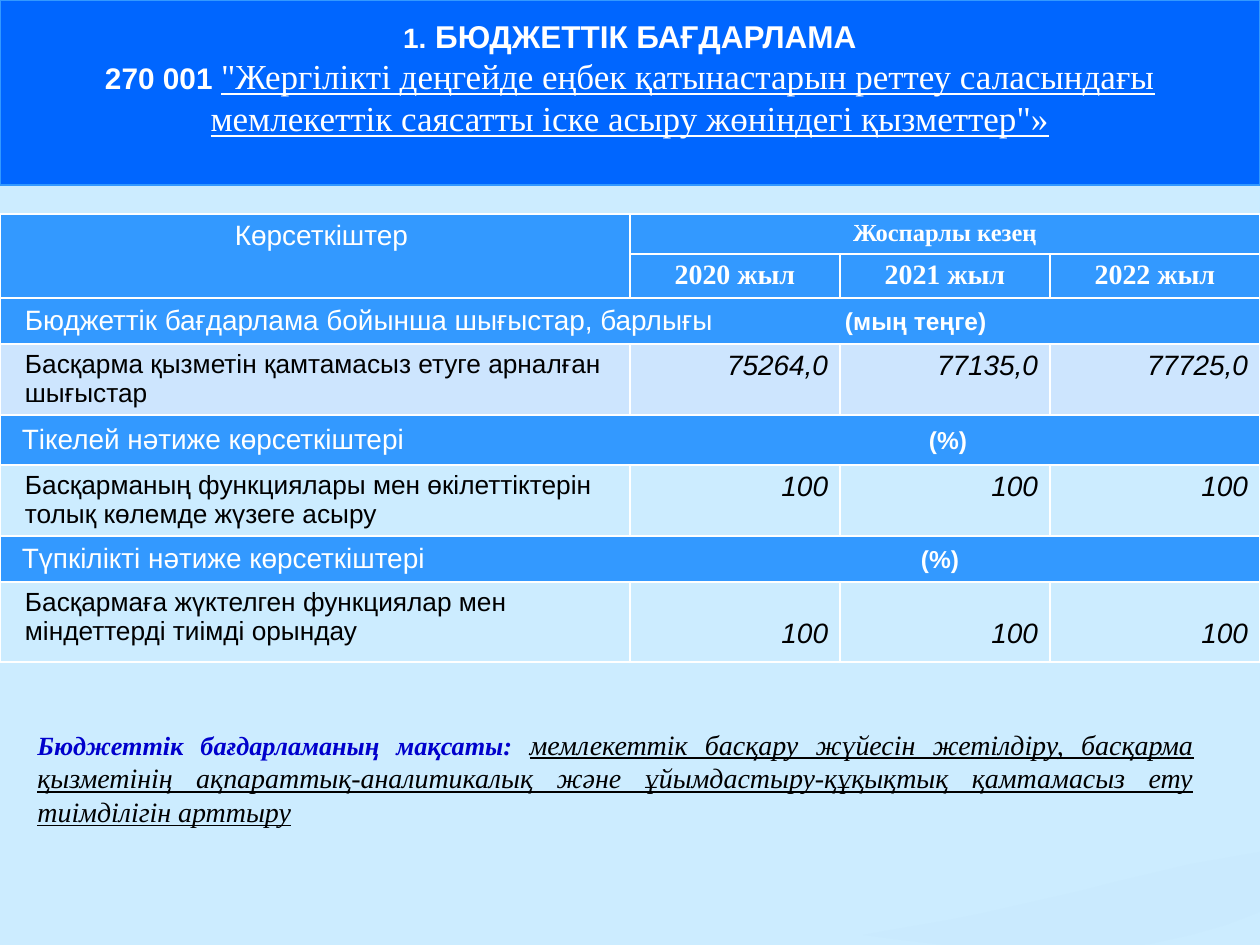
from lxml import etree
from pptx import Presentation
from pptx.dml.color import RGBColor
from pptx.enum.shapes import MSO_SHAPE
from pptx.enum.text import MSO_ANCHOR, PP_ALIGN
from pptx.oxml import parse_xml
from pptx.oxml.ns import nsdecls, qn
from pptx.util import Emu, Pt

RECTANGLE = MSO_SHAPE.RECTANGLE
TOP, MIDDLE, BOTTOM = MSO_ANCHOR.TOP, MSO_ANCHOR.MIDDLE, MSO_ANCHOR.BOTTOM
LEFT, CENTER, RIGHT, JUSTIFY = PP_ALIGN.LEFT, PP_ALIGN.CENTER, PP_ALIGN.RIGHT, PP_ALIGN.JUSTIFY
SERIF = "Times New Roman"
WHITE, BLACK, BLUE, PALE = "FFFFFF", "000000", "3399FF", "CDE5FE"
EMU_PER_PX = 914400 // 126

COLUMN_WIDTHS = [630, 210, 210, 210]
ROW_HEIGHTS = [40, 44, 46, 71, 50, 71, 46, 80]
YEARS = ["2020 жыл", "2021 жыл", "2022 жыл"]
SECTIONS = [
    (2, "Бюджеттік бағдарлама бойынша шығыстар, барлығы", "(мың теңге)", 25, 845),
    (4, "Тікелей нәтиже көрсеткіштері", "(%)", 22, 929),
    (6, "Түпкілікті нәтиже көрсеткіштері", "(%)", 22, 921),
]
INDICATORS = [
    (3, "Басқарма қызметін қамтамасыз етуге арналған шығыстар",
     ["75264,0", "77135,0", "77725,0"], PALE, TOP),
    (5, "Басқарманың функциялары мен өкілеттіктерін толық көлемде жүзеге асыру",
     ["100"] * 3, None, TOP),
    (7, "Басқармаға жүктелген функциялар мен міндеттерді тиімді орындау",
     ["100"] * 3, None, BOTTOM),
]
WAVE = [
    (1260, 852), (1242, 855), (1226, 858), (1191, 864), (1153, 873), (1115, 882),
    (1080, 891), (979, 914), (949, 920), (891, 930), (863, 935), (901, 940),
    (953, 946), (999, 950), (1042, 951), (1082, 950), (1118, 948), (1150, 944),
    (1191, 935), (1226, 925), (1260, 912),
]


def px(value):
    return Emu(value * EMU_PER_PX)


def color(value):
    return RGBColor.from_string(value)


def add_text(para, text, size=16, font="Arial", fill=WHITE, bold=False, italic=False,
             underline=False, align=None):
    if align is not None:
        para.alignment = align
    span = para.add_run()
    span.text = text
    span.font.size = Pt(size)
    span.font.name = font
    span.font.color.rgb = color(fill)
    span.font.bold = bold
    span.font.italic = italic
    span.font.underline = underline


def add_tab_stop(para, position):
    properties = para._p.get_or_add_pPr()
    stops = etree.SubElement(properties, qn("a:tabLst"))
    etree.SubElement(stops, qn("a:tab"), pos=str(px(position)), algn="l")


def format_cell(cell, fill):
    properties = cell._tc.get_or_add_tcPr()
    for side in ("lnL", "lnR", "lnT", "lnB"):
        properties.append(parse_xml(
            f'<a:{side} {nsdecls("a")} w="12700"><a:solidFill>'
            f'<a:srgbClr val="{WHITE}"/></a:solidFill></a:{side}>'))
    if fill:
        cell.fill.solid()
        cell.fill.fore_color.rgb = color(fill)
    else:
        cell.fill.background()


def place_in_cell(cell, left=12, right=12, bottom=6, anchor=TOP):
    cell.margin_left, cell.margin_right = px(left), px(right)
    cell.margin_top, cell.margin_bottom = px(6), px(bottom)
    cell.vertical_anchor = anchor
    return cell.text_frame.paragraphs[0]


def add_budget_table(page):
    frame = page.shapes.add_table(len(ROW_HEIGHTS), len(COLUMN_WIDTHS), 0, px(214),
                                  px(sum(COLUMN_WIDTHS)), px(sum(ROW_HEIGHTS)))
    table = frame.table
    for column, width in zip(table.columns, COLUMN_WIDTHS):
        column.width = px(width)
    row_fills = {row: fill for row, _, _, fill, _ in INDICATORS}
    for index, (row, height) in enumerate(zip(table.rows, ROW_HEIGHTS)):
        row.height = px(height)
        for cell in row.cells:
            format_cell(cell, row_fills.get(index, BLUE))

    table.cell(0, 0).merge(table.cell(1, 0))
    table.cell(0, 1).merge(table.cell(0, 3))
    add_text(place_in_cell(table.cell(0, 0), left=25), "Көрсеткіштер", align=CENTER)
    add_text(place_in_cell(table.cell(0, 1)), "Жоспарлы кезең", size=14, font=SERIF,
             bold=True, align=CENTER)
    for column, year in enumerate(YEARS, 1):
        add_text(place_in_cell(table.cell(1, column)), year, font=SERIF, bold=True, align=CENTER)

    for row, title, unit, title_left, unit_left in SECTIONS:
        table.cell(row, 0).merge(table.cell(row, 3))
        para = place_in_cell(table.cell(row, 0), left=title_left, anchor=MIDDLE)
        add_tab_stop(para, unit_left - title_left)
        add_text(para, title + "\t", align=LEFT)
        add_text(para, unit, size=14, bold=True)

    for row, title, values, _, anchor in INDICATORS:
        add_text(place_in_cell(table.cell(row, 0), left=25), title, size=15, fill=BLACK, align=LEFT)
        for column, value in enumerate(values, 1):
            para = place_in_cell(table.cell(row, column), anchor=anchor,
                                 bottom=12 if anchor == BOTTOM else 6)
            add_text(para, value, fill=BLACK, italic=True, align=RIGHT)


def add_wave(page):
    builder = page.shapes.build_freeform(*WAVE[0], scale=EMU_PER_PX)
    builder.add_line_segments(WAVE[1:], close=True)
    wave = builder.convert_to_shape()
    wave.shadow.inherit = False
    wave.line.fill.background()
    wave.fill.solid()
    wave.fill.fore_color.rgb = color("C6E7FC")
    tint = wave._element.spPr.find(qn("a:solidFill"))[0]
    etree.SubElement(tint, qn("a:alpha"), val="30000")


def add_goal(page):
    box = page.shapes.add_textbox(px(25), px(721), px(1181), px(115))
    box.text_frame.word_wrap = True
    para = box.text_frame.paragraphs[0]
    add_text(para, "Бюджеттік бағдарламаның мақсаты: ", size=15, font=SERIF,
             fill="0000CC", bold=True, italic=True, align=JUSTIFY)
    add_text(para, "мемлекеттік басқару жүйесін жетілдіру, басқарма қызметінің "
             "ақпараттық-аналитикалық және ұйымдастыру-құқықтық қамтамасыз ету "
             "тиімділігін арттыру", font=SERIF, fill=BLACK, italic=True, underline=True)


def add_title(page):
    banner = page.shapes.add_shape(RECTANGLE, 0, 0, px(1260), px(185))
    banner.shadow.inherit = False
    banner.fill.solid()
    banner.fill.fore_color.rgb = color("0066FF")
    banner.line.color.rgb = color(BLUE)
    banner.line.width = Pt(0.75)
    frame = banner.text_frame
    frame.word_wrap = True
    frame.vertical_anchor = TOP
    frame.margin_top = px(17)
    para = frame.paragraphs[0]
    add_text(para, "1.", bold=True, align=CENTER)
    add_text(para, " БЮДЖЕТТІК БАҒДАРЛАМА", size=18, bold=True)
    para.add_line_break()
    add_text(para, "270 001 ", size=17, bold=True)
    add_text(para, '"Жергілікті деңгейде еңбек қатынастарын реттеу саласындағы '
             'мемлекеттік саясатты іске асыру жөніндегі қызметтер"»',
             size=20, font=SERIF, underline=True)


def main():
    deck = Presentation()
    deck.slide_width, deck.slide_height = px(1260), px(945)
    page = deck.slides.add_slide(deck.slide_layouts[6])
    page.background.fill.solid()
    page.background.fill.fore_color.rgb = color("CCECFF")
    add_budget_table(page)
    add_wave(page)
    add_goal(page)
    add_title(page)
    deck.save("out.pptx")


if __name__ == "__main__":
    main()
